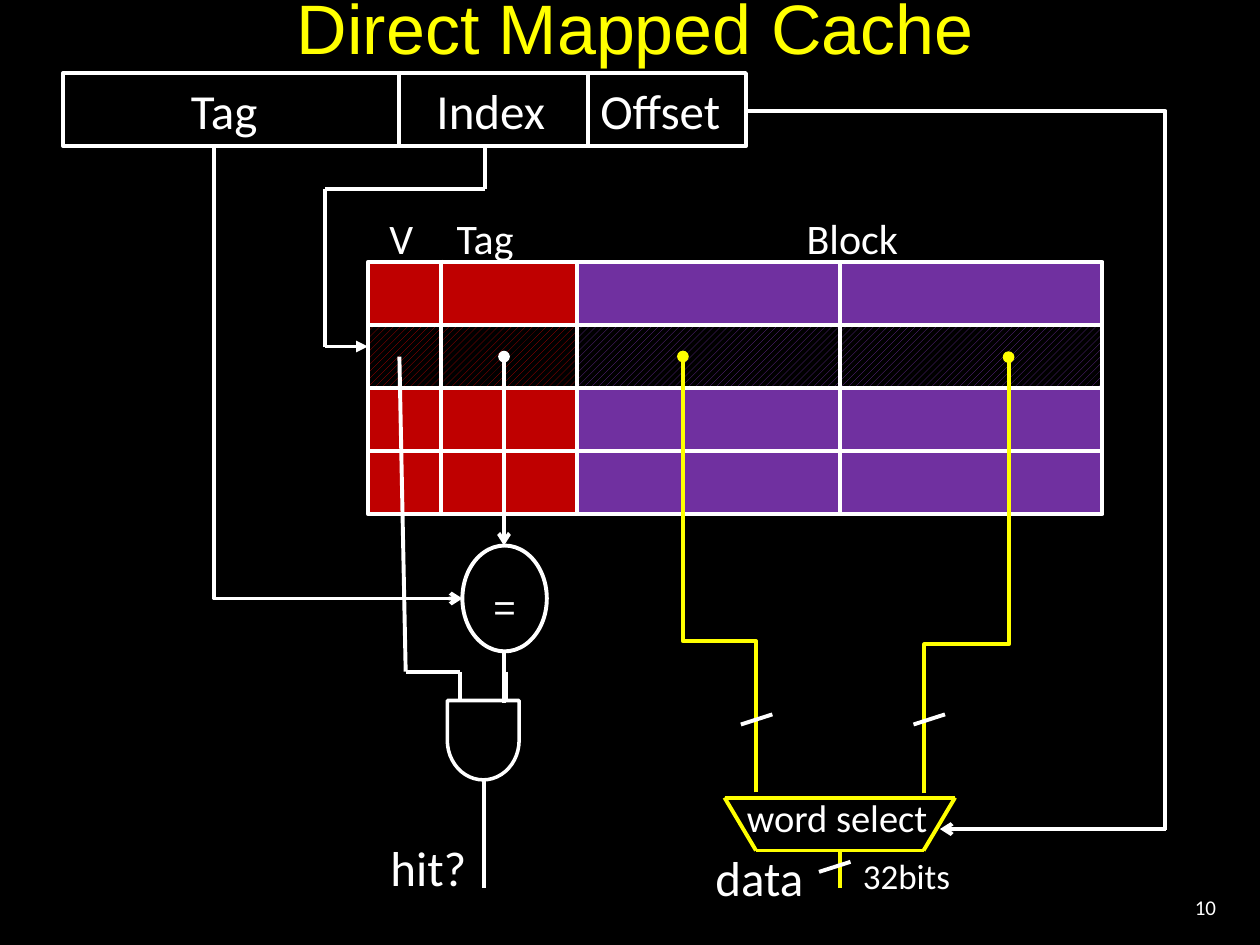
from pptx import Presentation
from pptx.dml.color import RGBColor
from pptx.enum.dml import MSO_PATTERN
from pptx.enum.shapes import MSO_CONNECTOR, MSO_SHAPE
from pptx.enum.text import MSO_ANCHOR, PP_ALIGN
from pptx.oxml import parse_xml
from pptx.oxml.ns import nsdecls, qn
from pptx.util import Inches, Pt

STRAIGHT, ELBOW = MSO_CONNECTOR.STRAIGHT, MSO_CONNECTOR.ELBOW
RECT, OVAL, DELAY = MSO_SHAPE.RECTANGLE, MSO_SHAPE.OVAL, MSO_SHAPE.FLOWCHART_DELAY
STRIPES = MSO_PATTERN.WIDE_UPWARD_DIAGONAL
LEFT, CENTER, RIGHT = PP_ALIGN.LEFT, PP_ALIGN.CENTER, PP_ALIGN.RIGHT
TOP, MIDDLE = MSO_ANCHOR.TOP, MSO_ANCHOR.MIDDLE
COLORS = {name: RGBColor.from_string(value) for name, value in {
    "black": "000000", "white": "FFFFFF", "yellow": "FFFF00",
    "red": "BF0000", "purple": "7030A0"}.items()}

deck = Presentation()
deck.slide_width, deck.slide_height = Inches(10), Inches(7.5)
slide = deck.slides.add_slide(deck.slide_layouts[6])
slide.background.fill.solid()
slide.background.fill.fore_color.rgb = COLORS["black"]
shapes = slide.shapes


def write(target, text, size, align=LEFT, anchor=TOP, wrap=True,
          color="white", font="Calibri", spacing=None):
    frame = target.text_frame
    frame.word_wrap = wrap
    frame.vertical_anchor = anchor
    frame.text = text
    paragraph = frame.paragraphs[0]
    paragraph.alignment = align
    paragraph.line_spacing = spacing
    for run in paragraph.runs:
        run.font.size, run.font.name = Pt(size), font
        run.font.color.rgb = COLORS[color]


def wire(x1, y1, x2, y2, color="white", head=None, tail=None, kind=STRAIGHT):
    line = shapes.add_connector(kind, *map(Inches, (x1, y1, x2, y2)))
    line.line.width = Pt(2.25)
    line.line.color.rgb = COLORS[color]
    properties = line._element.spPr
    for tag, end in (("headEnd", head), ("tailEnd", tail)):
        if end:
            properties.find(qn("a:ln")).append(
                parse_xml(f'<a:{tag} {nsdecls("a")} type="{end}"/>'))
    properties.append(parse_xml(f'<a:effectLst {nsdecls("a")}/>'))
    return properties


cache_left, block_left, cache_right = 2.92, 4.58, 8.75
cache_top, row_height, row_count, chosen_row = 2.08, 0.5, 4, 1
cache_bottom = cache_top + row_height * row_count
for row in range(row_count):
    for start, end, color in ((cache_left, block_left, "red"),
                              (block_left, cache_right, "purple")):
        entry = shapes.add_shape(RECT, *map(Inches, (
            start, cache_top + row * row_height, end - start, row_height)))
        entry.shadow.inherit = False
        if row == chosen_row:
            entry.fill.patterned()
            entry.fill.pattern = STRIPES
            entry.fill.back_color.rgb = COLORS["black"]
        else:
            entry.fill.solid()
        entry.fill.fore_color.rgb = COLORS[color]
        entry.line.color.rgb = COLORS["white"]
        entry.line.width = Pt(2.25)

address = shapes.add_shape(RECT, *map(Inches, (0.5, 0.58, 5.42, 0.58)))
comparator = shapes.add_shape(OVAL, *map(Inches, (3.67, 4.33, 0.67, 0.84)))
and_gate = shapes.add_shape(DELAY, *map(Inches, (3.52, 5.59, 0.63, 0.57)))
and_gate.rotation = 90
for outline, width in ((address, 2.25), (comparator, 2.25), (and_gate, 2)):
    outline.shadow.inherit = False
    outline.fill.background()
    outline.line.color.rgb = COLORS["white"]
    outline.line.width = Pt(width)
write(address, "\tTag\tIndex\tOffset", 28, CENTER, MIDDLE)
write(comparator, "=", 22, CENTER, MIDDLE, font="Arial", spacing=1.34)
stops = "".join(f'<a:tab pos="{Inches(stop)}" algn="l"/>' for stop in (0.81, 2.76, 4.06))
address.text_frame.paragraphs[0]._p.get_or_add_pPr().append(
    parse_xml(f'<a:tabLst {nsdecls("a")}>{stops}</a:tabLst>'))

for divider in (3.17, 4.67):
    wire(divider, 0.58, divider, 1.17)
for divider, start in ((3.5, 2.06), (6.67, cache_top)):
    wire(divider, start, divider, cache_bottom)

selector = [(5.75, 6.33), (7.58, 6.33), (7.33, 6.75), (6, 6.75)]
index_path = [(3.85, 1.17), (3.85, 1.5), (2.58, 1.5), (2.58, 2.75)]
valid_path = [(3.17, 2.83), (3.22, 5.33), (3.65, 5.33), (3.65, 5.56)]
hit_path = [(3.84, 6.19), (3.84, 6.42), (3.84, 7.05)]
for path_points, color in ((selector + selector[:1], "yellow"), (index_path, "white"),
                           (valid_path, "white"), (hit_path, "white")):
    for start, end in zip(path_points, path_points[1:]):
        wire(*start, *end, color)

wire(2.58, 2.75, cache_left, 2.75, tail="triangle")
wire(4, 4.33, 4, 2.83, head="arrow", tail="oval")
wire(4, 5.17, 4, 5.58)
wire(4.02, 5.33, 4.02, 5.56)
wire(9.25, 6.58, 7.46, 6.58, tail="arrow")
wire(6.67, 6.75, 6.67, 7.05, "yellow")

elbows = [
    (1.7, 1.17, 1.97, 3.58, "white", "arrow", None, 180, "", "bentConnector2", None),
    (5.94, 4.23, 3.46, 0.67, "yellow", None, "oval", 90, "HV", "bentConnector3", 34100),
    (3.98, 4.27, 3.46, 0.58, "yellow", None, "oval", 270, "V", "bentConnector3", 34700),
    (5.92, 0.88, 3.33, 5.71, "white", None, None, 0, "", "bentConnector2", None),
]
for left, top, width, height, color, head, tail, turn, flips, bend, share in elbows:
    properties = wire(left, top, left + width, top + height, color, head, tail, ELBOW)
    frame = properties.find(qn("a:xfrm"))
    frame.set("rot", str(turn * 60000))
    for axis in flips:
        frame.set("flip" + axis, "1")
    geometry = properties.find(qn("a:prstGeom"))
    geometry.set("prst", bend)
    if share:
        geometry.find(qn("a:avLst")).append(parse_xml(
            f'<a:gd {nsdecls("a")} name="adj1" fmla="val {share}"/>'))

for x, y in ((5.88, 5.75), (7.25, 5.75), (6.5, 6.92)):
    wire(x, y, x + 0.25, y - 0.08)

column_label = {"align": CENTER, "wrap": False, "spacing": 1.34}
labels = [
    ("Direct Mapped Cache", 0.25, 0, 9.58, 0.42, 40,
     {"align": CENTER, "anchor": MIDDLE, "color": "yellow", "font": "Arial"}),
    ("V", 2.99, 1.5, 0.39, 0.6, 24, column_label),
    ("Tag", 3.52, 1.5, 0.66, 0.6, 24, column_label),
    ("Block", 6.3, 1.5, 0.93, 0.6, 24, column_label),
    ("hit?", 3, 6.6, 1.25, 0.57, 28, {}),
    ("data", 5.58, 6.68, 1.17, 0.57, 28, {}),
    ("word select", 5.83, 6.25, 2.25, 0.47, 22, {}),
    ("32bits", 6.75, 6.73, 1.5, 0.44, 20, {}),
    ("10", 8.92, 7, 0.83, 0.4, 12, {"align": RIGHT, "anchor": MIDDLE}),
]
for text, left, top, width, height, size, style in labels:
    write(shapes.add_textbox(*map(Inches, (left, top, width, height))), text, size, **style)

deck.save("out.pptx")
